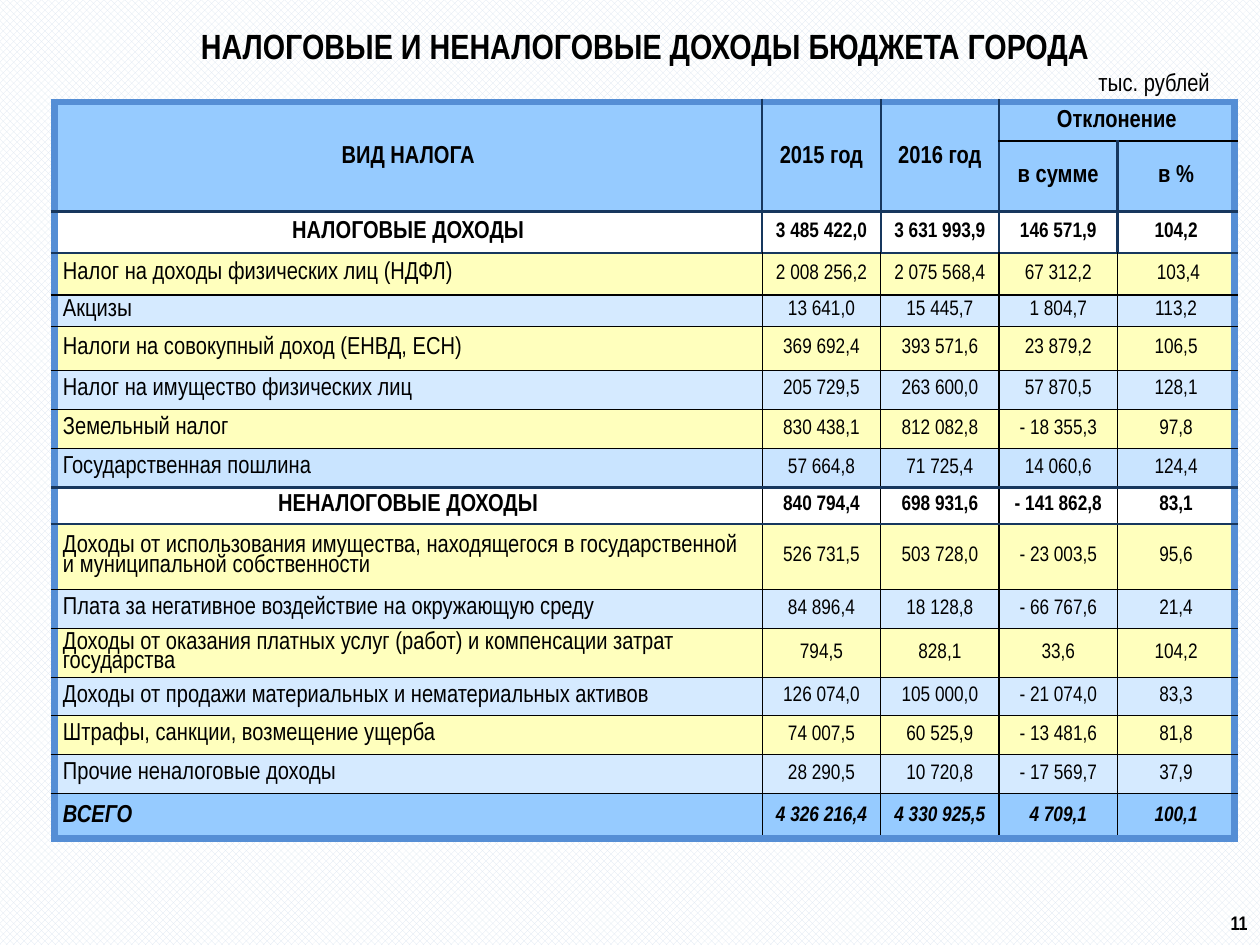
from lxml import etree
from pptx import Presentation
from pptx.dml.color import RGBColor
from pptx.enum import dml, text
from pptx.oxml import ns
from pptx.util import Inches, Pt

BLACK = RGBColor(0x00, 0x00, 0x00)
WHITE = RGBColor(0xFF, 0xFF, 0xFF)
NAVY = RGBColor(0x17, 0x37, 0x5E)
FRAME = RGBColor(0x55, 0x8E, 0xD5)
SKY = RGBColor(0x96, 0xCB, 0xFF)
YELLOW = RGBColor(0xFF, 0xFF, 0xBD)
PALE = RGBColor(0xD5, 0xEA, 0xFF)
DUTY = RGBColor(0xC9, 0xE4, 0xFF)
CHECK = RGBColor(0xDC, 0xE6, 0xF2)
FONT = "Arial Narrow"
LEFT, CENTER, RIGHT = text.PP_ALIGN.LEFT, text.PP_ALIGN.CENTER, text.PP_ALIGN.RIGHT
MIDDLE, TOP = text.MSO_ANCHOR.MIDDLE, text.MSO_ANCHOR.TOP

TITLE = "НАЛОГОВЫЕ И НЕНАЛОГОВЫЕ ДОХОДЫ БЮДЖЕТА ГОРОДА"
UNIT = "тыс. рублей"
PAGE = "11"
HEADER = [
    (0, 0, 1, 0, "ВИД НАЛОГА"),
    (0, 1, 1, 1, "2015 год"),
    (0, 2, 1, 2, "2016 год"),
    (0, 3, 0, 4, "Отклонение"),
    (1, 3, 1, 3, "в сумме"),
    (1, 4, 1, 4, "в %"),
]
ROWS = [
    ("section", WHITE, 0.33, "НАЛОГОВЫЕ ДОХОДЫ", "3 485 422,0", "3 631 993,9", "146 571,9", "104,2"),
    ("item", YELLOW, 0.33, "Налог на доходы физических лиц (НДФЛ)", "2 008 256,2", "2 075 568,4", "67 312,2", " 103,4"),
    ("item", PALE, 0.25, "Акцизы", "13 641,0", "15 445,7", "1 804,7", "113,2"),
    ("item", YELLOW, 0.35, "Налоги на совокупный доход (ЕНВД, ЕСН)", "369 692,4", "393 571,6", "23 879,2", "106,5"),
    ("item", PALE, 0.31, "Налог на имущество физических лиц", "205 729,5", "263 600,0", "57 870,5", "128,1"),
    ("item", YELLOW, 0.31, "Земельный налог", "830 438,1", "812 082,8", "- 18 355,3", "97,8"),
    ("item", DUTY, 0.31, "Государственная пошлина", "57 664,8", "71 725,4", "14 060,6", "124,4"),
    ("section", WHITE, 0.29, "НЕНАЛОГОВЫЕ ДОХОДЫ", "840 794,4", "698 931,6", "- 141 862,8", "83,1"),
    ("item", YELLOW, 0.52, "Доходы от использования имущества, находящегося в государственной и муниципальной собственности",
     "526 731,5", "503 728,0", "- 23 003,5", "95,6"),
    ("item", PALE, 0.31, "Плата за негативное воздействие на окружающую среду", "84 896,4", "18 128,8", "- 66 767,6", "21,4"),
    ("item", YELLOW, 0.39, "Доходы от оказания платных услуг (работ) и компенсации затрат государства",
     "794,5", "828,1", "33,6", "104,2"),
    ("item", PALE, 0.3, "Доходы от продажи материальных и нематериальных активов", "126 074,0", "105 000,0", "- 21 074,0", "83,3"),
    ("item", YELLOW, 0.31, "Штрафы, санкции, возмещение ущерба", "74 007,5", "60 525,9", "- 13 481,6", "81,8"),
    ("item", PALE, 0.31, "Прочие неналоговые доходы", "28 290,5", "10 720,8", "- 17 569,7", "37,9"),
    ("total", SKY, 0.36, "ВСЕГО", "4 326 216,4", "4 330 925,5", "4 709,1", "100,1"),
]
COL_WIDTHS = [5.62, 0.94, 0.94, 0.94, 0.93]
ROW_HEIGHTS = [0.31, 0.56] + [row[2] for row in ROWS]
NAVY_LINES = (2, 3, 9, 10)


def write(tf, content, size=14, bold=False, italic=False, align=CENTER, spacing=None, small_caps=False):
    tf.word_wrap = True
    p = tf.paragraphs[0]
    p.alignment = align
    if spacing:
        p.line_spacing = spacing
    r = p.add_run()
    r.text = content
    r.font.name, r.font.size = FONT, Pt(size)
    r.font.bold, r.font.italic = bold, italic
    r.font.color.rgb = BLACK
    if small_caps:
        r.font._element.set("cap", "small")


def text_box(s, box, content, anchor=MIDDLE, **fmt):
    tf = s.shapes.add_textbox(*map(Inches, box)).text_frame
    tf.vertical_anchor = anchor
    write(tf, content, **fmt)
    return tf


def horizontal_line(i):
    if i in (0, len(ROW_HEIGHTS)):
        return FRAME, 4.5
    return (NAVY, 1.5) if i in NAVY_LINES else (BLACK, 1)


def vertical_line(j, row):
    if j in (0, len(COL_WIDTHS)):
        return FRAME, 4.5
    return (NAVY, 1.5) if row < 3 else (BLACK, 1)


def style_cell(cell, top, left, bottom, right, fill, inset):
    tc_pr = cell._tc.get_or_add_tcPr()
    edges = {
        "a:lnL": vertical_line(left, top),
        "a:lnR": vertical_line(right + 1, top),
        "a:lnT": horizontal_line(top),
        "a:lnB": horizontal_line(bottom + 1),
    }
    for tag, (color, width) in edges.items():
        ln = etree.SubElement(tc_pr, ns.qn(tag), w=str(Pt(width)))
        solid = etree.SubElement(ln, ns.qn("a:solidFill"))
        etree.SubElement(solid, ns.qn("a:srgbClr"), val=str(color))
    cell.fill.solid()
    cell.fill.fore_color.rgb = fill
    cell.vertical_anchor = MIDDLE
    cell.margin_left = cell.margin_right = Inches(0.07)
    cell.margin_top = cell.margin_bottom = Inches(inset)


def add_income_table(s):
    frame = s.shapes.add_table(len(ROW_HEIGHTS), len(COL_WIDTHS), Inches(0.43), Inches(0.81),
                               Inches(sum(COL_WIDTHS)), Inches(sum(ROW_HEIGHTS)))
    table = frame.table
    table.first_row = table.horz_banding = False
    for column, width in zip(table.columns, COL_WIDTHS):
        column.width = Inches(width)
    for row, height in zip(table.rows, ROW_HEIGHTS):
        row.height = Inches(height)

    for i in range(2):
        for j in range(len(COL_WIDTHS)):
            style_cell(table.cell(i, j), i, j, i, j, SKY, 0.05)
    for top, left, bottom, right, label in HEADER:
        cell = table.cell(top, left)
        if (top, left) != (bottom, right):
            cell.merge(table.cell(bottom, right))
            tc_pr = cell._tc.tcPr
            for edge in list(tc_pr):
                tc_pr.remove(edge)
            style_cell(cell, top, left, bottom, right, SKY, 0.05)
        write(cell.text_frame, label, bold=True)

    for i, (kind, fill, _, *values) in enumerate(ROWS, 2):
        for j, value in enumerate(values):
            cell = table.cell(i, j)
            style_cell(cell, i, j, i, j, fill, 0 if kind == "item" else 0.05)
            write(cell.text_frame, value, size=12 if j else 14, bold=kind != "item", italic=kind == "total",
                  align=CENTER if j or kind == "section" else LEFT, spacing=0.85)


def main():
    prs = Presentation()
    prs.slide_width, prs.slide_height = Inches(10), Inches(7.5)
    s = prs.slides.add_slide(prs.slide_layouts[6])
    background = s.background.fill
    background.patterned()
    background.pattern = dml.MSO_PATTERN.LARGE_CHECKER_BOARD
    background.fore_color.rgb, background.back_color.rgb = CHECK, WHITE

    add_income_table(s)
    tf = text_box(s, (8.62, 0.48, 1.1, 0.34), UNIT, align=text.PP_ALIGN.JUSTIFY)
    tf.word_wrap = False
    text_box(s, (0.83, 0.12, 8.58, 0.48), TITLE, size=20, bold=True)
    text_box(s, (9.33, 7.14, 0.67, 0.35), PAGE, anchor=TOP, bold=True, align=RIGHT, small_caps=True)
    prs.save("out.pptx")


if __name__ == "__main__":
    main()
